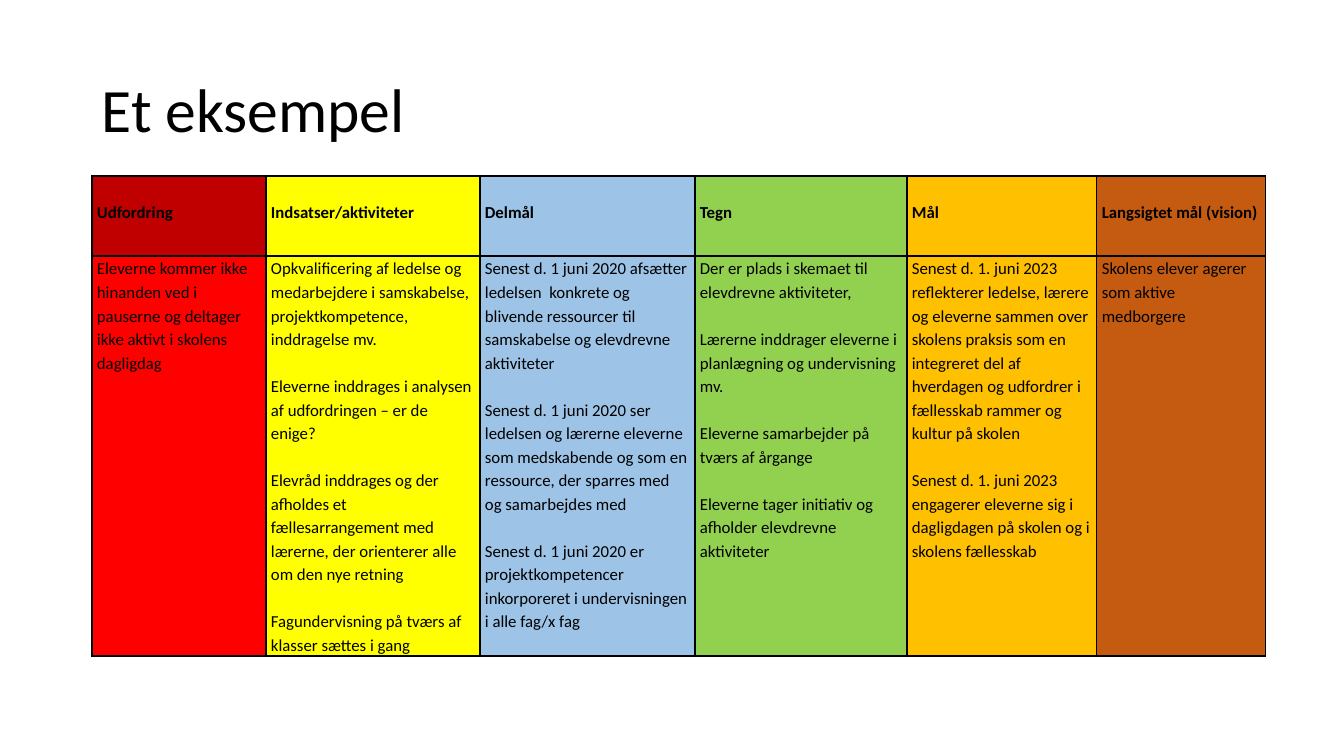
from lxml import etree
from pptx import Presentation
from pptx.dml.color import RGBColor
from pptx.enum.text import MSO_ANCHOR
from pptx.oxml.ns import qn
from pptx.util import Pt

MIDDLE = MSO_ANCHOR.MIDDLE
TOP = MSO_ANCHOR.TOP

PX = 12192000 / 1344
PAGE_WIDTH, PAGE_HEIGHT = 1344, 756

BLACK = RGBColor(0x00, 0x00, 0x00)
DARK_RED = RGBColor(0xC0, 0x00, 0x00)
RED = RGBColor(0xFF, 0x00, 0x00)
YELLOW = RGBColor(0xFF, 0xFF, 0x00)
BLUE = RGBColor(0x9D, 0xC3, 0xE6)
GREEN = RGBColor(0x92, 0xD0, 0x50)
AMBER = RGBColor(0xFF, 0xC0, 0x00)
BROWN = RGBColor(0xC5, 0x5A, 0x11)

ROW_HEIGHTS = [80, 400]
HEADER_TOP_MARGIN = 24

# Width, header, header fill, body fill, body blocks
COLUMNS = [
    (174, "Udfordring", DARK_RED, RED, [
        "Eleverne kommer ikke hinanden ved i pauserne og deltager ikke aktivt i skolens dagligdag",
    ]),
    (214, "Indsatser/aktiviteter", YELLOW, YELLOW, [
        "Opkvalificering af ledelse og medarbejdere i samskabelse, projektkompetence, inddragelse mv.",
        "Eleverne inddrages i analysen af udfordringen – er de enige?",
        "Elevråd inddrages og der afholdes et fællesarrangement med lærerne, "
        "der orienterer alle om den nye retning",
        "Fagundervisning på tværs af klasser sættes i gang",
    ]),
    (215, "Delmål", BLUE, BLUE, [
        "Senest d. 1 juni 2020 afsætter ledelsen  konkrete og blivende ressourcer "
        "til samskabelse og elevdrevne aktiviteter",
        "Senest d. 1 juni 2020 ser ledelsen og lærerne eleverne som medskabende "
        "og som en ressource, der sparres med og samarbejdes med",
        "Senest d. 1 juni 2020 er projektkompetencer\n"
        "inkorporeret i undervisningen i alle fag/x fag",
    ]),
    (212, "Tegn", GREEN, GREEN, [
        "Der er plads i skemaet til elevdrevne aktiviteter,",
        "Lærerne inddrager eleverne i planlægning og undervisning mv.",
        "Eleverne samarbejder på tværs af årgange",
        "Eleverne tager initiativ og afholder elevdrevne aktiviteter",
    ]),
    (190, "Mål", AMBER, AMBER, [
        "Senest d. 1. juni 2023 reflekterer ledelse, lærere og eleverne sammen over "
        "skolens praksis som en integreret del af hverdagen og udfordrer i fællesskab "
        "rammer og kultur på skolen",
        "Senest d. 1. juni 2023 engagerer eleverne sig i dagligdagen på skolen "
        "og i skolens fællesskab",
    ]),
    (169, "Langsigtet mål (vision)", BROWN, BROWN, [
        "Skolens elever agerer som aktive medborgere",
    ]),
]


def px(length):
    return round(length * PX)


class SlideBuilder:
    font_name = "Calibri"
    title_size = Pt(44)
    cell_size = Pt(12)
    block_gap = Pt(16.8)
    border_width = Pt(1)
    cell_inset = 5

    def __init__(self, page):
        self.page = page

    def style(self, para, size, line_spacing, bold=False):
        para.line_spacing = line_spacing
        para.font.name = self.font_name
        para.font.size = size
        para.font.bold = bold
        para.font.color.rgb = BLACK

    def title(self, text, left, top, width, height):
        box = self.page.shapes.add_textbox(px(left), px(top), px(width), px(height))
        frame = box.text_frame
        frame.word_wrap = True
        frame.vertical_anchor = MIDDLE
        frame.text = text
        self.style(frame.paragraphs[0], self.title_size, 0.9)

    def table(self, columns, row_heights, left, top):
        widths = [column[0] for column in columns]
        table = self.page.shapes.add_table(
            len(row_heights), len(columns), px(left), px(top),
            px(sum(widths)), px(sum(row_heights))).table
        table.first_row = False
        table.horz_banding = False
        for row, height in zip(table.rows, row_heights):
            row.height = px(height)
        for index, (width, header, header_fill, body_fill, blocks) in enumerate(columns):
            table.columns[index].width = px(width)
            self.cell(table.cell(0, index), [header], header_fill, HEADER_TOP_MARGIN, True)
            self.cell(table.cell(1, index), blocks, body_fill)

    def cell(self, cell, blocks, fill, margin_top=0, bold=False):
        """Fill a cell; blocks are set apart by a gap, lines within a block are not."""
        cell.margin_left = cell.margin_right = px(self.cell_inset)
        cell.margin_top = px(margin_top)
        cell.margin_bottom = 0
        cell.vertical_anchor = TOP
        self.borders(cell)
        cell.fill.solid()
        cell.fill.fore_color.rgb = fill
        cell.text = "\n".join(blocks)
        paragraphs = iter(cell.text_frame.paragraphs)
        for block_index, block in enumerate(blocks):
            for line_index, _ in enumerate(block.split("\n")):
                para = next(paragraphs)
                self.style(para, self.cell_size, 1.15, bold)
                if block_index and not line_index:
                    para.space_before = self.block_gap

    def borders(self, cell):
        properties = cell._tc.get_or_add_tcPr()
        for side in ("a:lnL", "a:lnR", "a:lnT", "a:lnB"):
            line = etree.SubElement(properties, qn(side), w=str(self.border_width))
            solid = etree.SubElement(line, qn("a:solidFill"))
            etree.SubElement(solid, qn("a:srgbClr"), val=str(BLACK))


def main():
    deck = Presentation()
    deck.slide_width = px(PAGE_WIDTH)
    deck.slide_height = px(PAGE_HEIGHT)
    builder = SlideBuilder(deck.slides.add_slide(deck.slide_layouts[6]))
    builder.title("Et eksempel", 92, 40, 1159, 146)
    builder.table(COLUMNS, ROW_HEIGHTS, 92, 176)
    deck.save("out.pptx")


if __name__ == "__main__":
    main()
